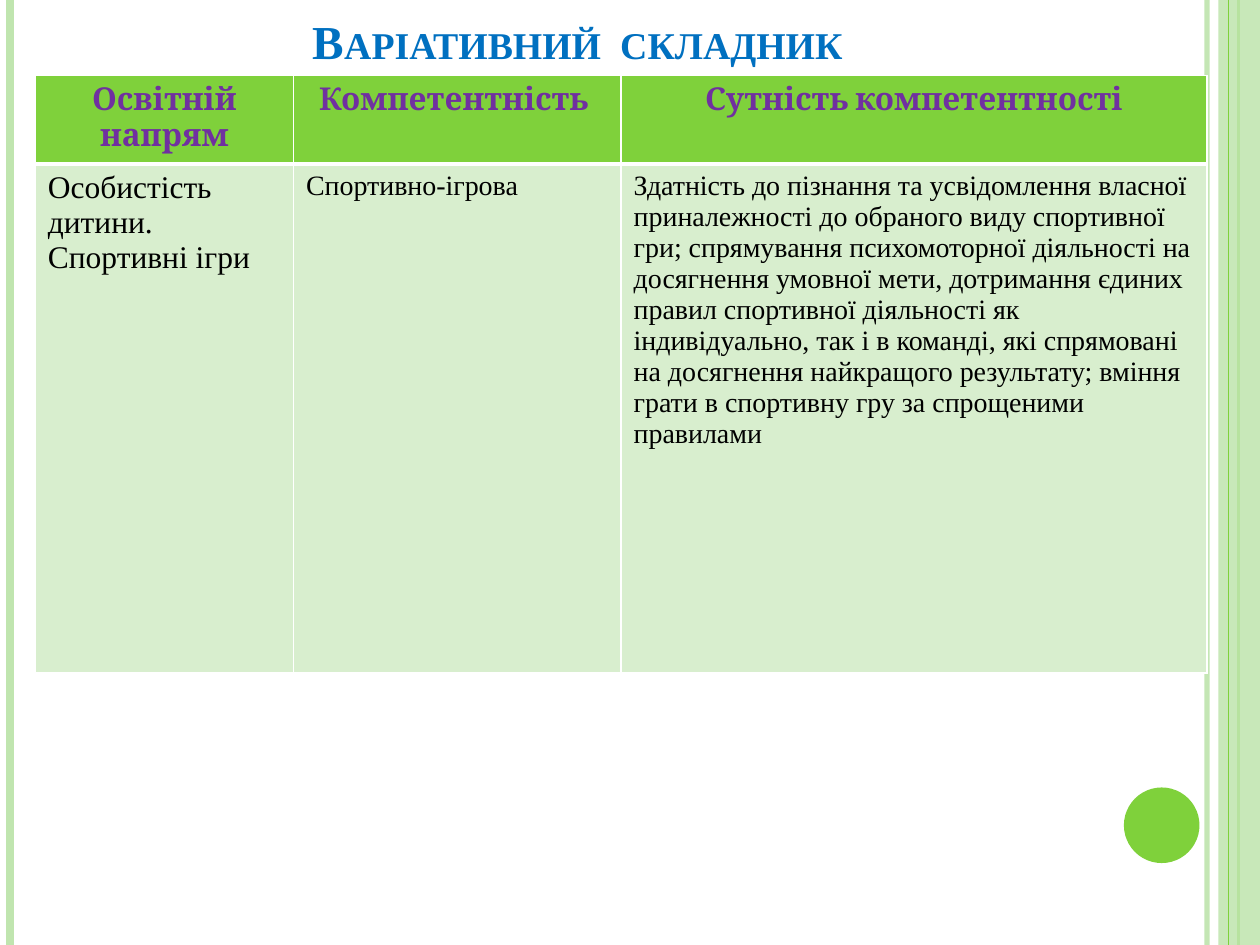
from lxml import etree
from pptx import Presentation
from pptx.dml.color import RGBColor
from pptx.enum.shapes import MSO_CONNECTOR, MSO_SHAPE
from pptx.enum.text import MSO_ANCHOR, PP_ALIGN
from pptx.oxml.ns import qn
from pptx.util import Inches, Pt

LINE = MSO_CONNECTOR.STRAIGHT
RECT, OVAL = MSO_SHAPE.RECTANGLE, MSO_SHAPE.OVAL
LEFT, MID = PP_ALIGN.LEFT, PP_ALIGN.CENTER
LOW = MSO_ANCHOR.BOTTOM
WIDE, HIGH = 10, 7.5
GREEN, PALE, TINT, WHITE = "7FD13B", "C0E5AF", "D8EECE", "FFFFFF"
ROMAN = "Times New Roman"

TITLE = "Варіативний  складник"
HEADS = ["Освітній напрям", "Компетентність ", "Сутність компетентності"]
BODY = [
    (["Особистість дитини.", "Спортивні ігри"], 18),
    (["Спортивно-ігрова"], 16),
    (["Здатність до пізнання та усвідомлення власної приналежності до "
      "обраного виду спортивної гри; спрямування психомоторної діяльності "
      "на досягнення умовної мети, дотримання єдиних правил спортивної "
      "діяльності як індивідуально, так і в команді, які спрямовані на "
      "досягнення найкращого результату; вміння грати в спортивну гру за "
      "спрощеними правилами"], 16),
]
COLS, ROWS = [2.05, 2.6, 4.65], [0.7, 4.04]
BACK = [(9.58, PALE, 3, 93), (0.08, PALE, 4.5, 100), (9.83, GREEN, 1.5, 100)]
FRONT = [(9.75, GREEN, 0.75, 100)]
SHAPES = [(RECT, (9.67, 0, 0.33, HIGH), PALE, 87),
          (OVAL, (8.92, 6.25, 0.6, 0.6), GREEN, 100)]


def tone(color, code):
    color.rgb = RGBColor.from_string(code)


def fade(part, pct):
    if pct < 100:
        node = next(part.iter(qn("a:srgbClr")))
        etree.SubElement(node, qn("a:alpha")).set("val", str(pct * 1000))


def rule(x, code, wide, pct):
    line = slide.shapes.add_connector(LINE, Inches(x), 0, Inches(x), Inches(HIGH))
    tone(line.line.color, code)
    line.line.width = Pt(wide)
    props = line._element.spPr
    fade(props, pct)
    etree.SubElement(props, qn("a:effectLst"))


def solid(kind, box, code, pct):
    shape = slide.shapes.add_shape(kind, *map(Inches, box))
    shape.shadow.inherit = False
    shape.fill.solid()
    tone(shape.fill.fore_color, code)
    shape.line.fill.background()
    fade(shape._element.spPr, pct)


def write(frame, texts, size, face, code, bold, align):
    frame.word_wrap = True
    for i, text in enumerate(texts):
        para = frame.add_paragraph() if i else frame.paragraphs[0]
        para.text = text
        para.alignment = align
        font = para.font
        font.size, font.name, font.bold = Pt(size), face, bold
        tone(font.color, code)


def edge(cell, low):
    props = cell._tc.get_or_add_tcPr()
    for i, (tag, wide) in enumerate(zip(("lnL", "lnR", "lnT", "lnB"), (1, 1, 4 - low, low))):
        side = etree.Element(qn("a:" + tag), w=str(Pt(wide)))
        fill = etree.SubElement(side, qn("a:solidFill"))
        etree.SubElement(fill, qn("a:srgbClr")).set("val", WHITE)
        props.insert(i, side)


def paint(cell, code, low):
    cell.fill.solid()
    tone(cell.fill.fore_color, code)
    edge(cell, low)


deck = Presentation()
deck.slide_width, deck.slide_height = Inches(WIDE), Inches(HIGH)
slide = deck.slides.add_slide(deck.slide_layouts[6])

for item in BACK:
    rule(*item)
solid(*SHAPES[0])
for item in FRONT:
    rule(*item)
solid(*SHAPES[1])

title = slide.shapes.add_textbox(*map(Inches, (0.5, 0.13, 8.17, 0.47))).text_frame
title.vertical_anchor = LOW
write(title, [TITLE], 27, ROMAN, "0070C0", True, MID)
title.paragraphs[0].runs[0]._r.get_or_add_rPr().set("cap", "small")

grid = slide.shapes.add_table(
    len(ROWS), len(COLS), Inches(0.28), Inches(0.6),
    Inches(sum(COLS)), Inches(sum(ROWS))).table
for col, wide in zip(grid.columns, COLS):
    col.width = Inches(wide)
for row, high in zip(grid.rows, ROWS):
    row.height = Inches(high)
for i, (head, (texts, size)) in enumerate(zip(HEADS, BODY)):
    top, cell = grid.cell(0, i), grid.cell(1, i)
    write(top.text_frame, [head], 18, "Cambria", "7030A0", True, MID)
    paint(top, GREEN, 3)
    write(cell.text_frame, texts, size, ROMAN, "000000", False, LEFT)
    paint(cell, TINT, 1)

deck.save("out.pptx")
